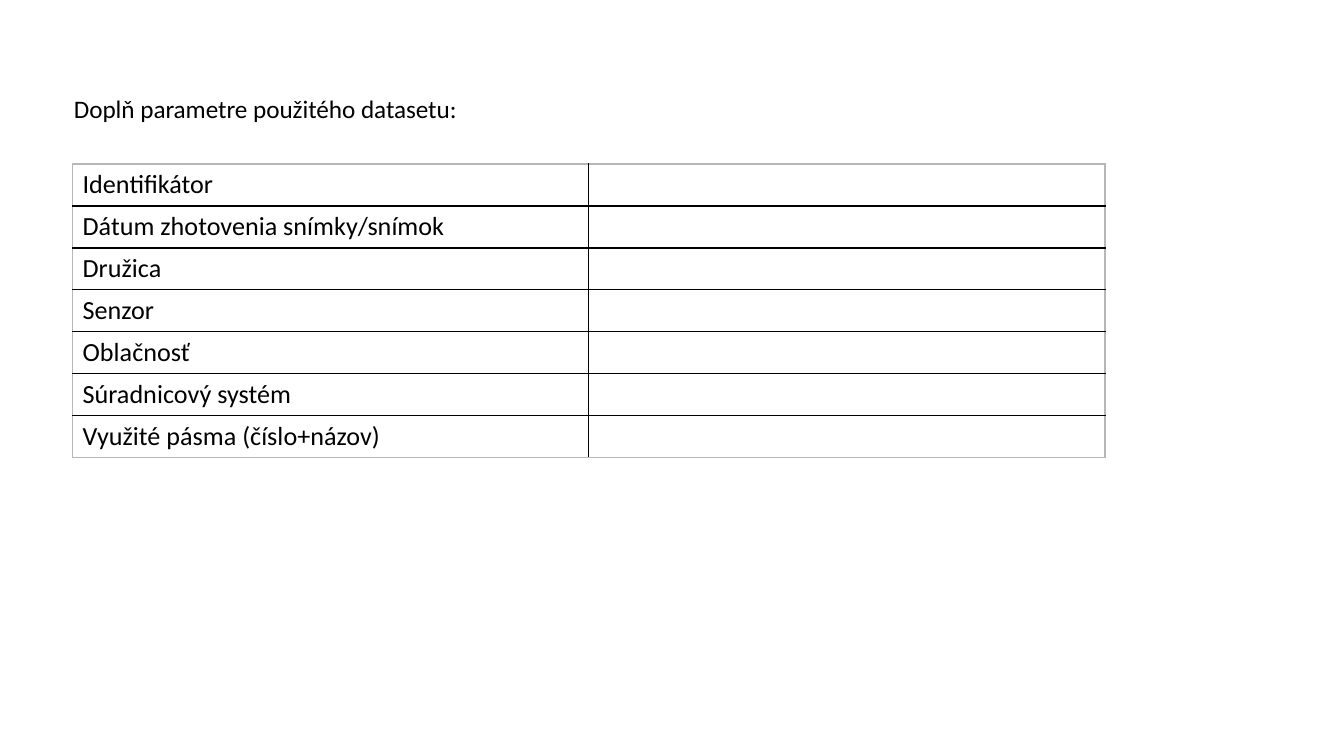
from lxml import etree
from pptx import Presentation
from pptx.dml.color import RGBColor
from pptx.enum import text
from pptx.oxml.ns import qn
from pptx.util import Inches, Pt

HEADING = "Doplň parametre použitého datasetu:"
PARAMETERS = [
    "Identifikátor",
    "Dátum zhotovenia snímky/snímok",
    "Družica",
    "Senzor",
    "Oblačnosť",
    "Súradnicový systém",
    "Využité pásma (číslo+názov)",
]
COLORS = {"text": "000000", "inner": "000000", "outer": "B7B7B7"}
FONT = "Calibri"
COLUMNS = 2
COLUMN_WIDTH = 3.84
ROW_HEIGHT = 0.3


def write(tf, content, size=14, color="text", align=text.PP_ALIGN.LEFT):
    p = tf.paragraphs[0]
    p.alignment = align
    if not content:
        etree.SubElement(p._p, qn("a:endParaRPr"), sz=str(size * 100))
        return
    r = p.add_run()
    r.text = content
    r.font.name = FONT
    r.font.size = Pt(size)
    r.font.color.rgb = RGBColor.from_string(COLORS[color])


def add_borders(cell, row, column):
    outer = {
        "a:lnL": column == 0,
        "a:lnR": column == COLUMNS - 1,
        "a:lnT": row == 0,
        "a:lnB": row == len(PARAMETERS) - 1,
    }
    tc_pr = cell._tc.get_or_add_tcPr()
    for i, (tag, on_edge) in enumerate(outer.items()):
        line = etree.Element(qn(tag), w=str(Pt(1)))
        fill = etree.SubElement(line, qn("a:solidFill"))
        color = COLORS["outer" if on_edge else "inner"]
        etree.SubElement(fill, qn("a:srgbClr"), val=color)
        tc_pr.insert(i, line)


def main():
    prs = Presentation()
    prs.slide_width = Inches(10)
    prs.slide_height = prs.slide_width * 9 // 16
    s = prs.slides.add_slide(prs.slide_layouts[5])

    title = s.shapes.title
    title.left, title.top = Inches(0.45), Inches(0.41)
    title.width, title.height = Inches(8.49), Inches(0.56)
    tf = title.text_frame
    tf.word_wrap = True
    tf.auto_size = text.MSO_AUTO_SIZE.NONE
    tf.vertical_anchor = text.MSO_ANCHOR.BOTTOM
    write(tf, HEADING, size=13.5)

    table = s.shapes.add_table(
        len(PARAMETERS), COLUMNS, Inches(0.54), Inches(1.22),
        Inches(COLUMN_WIDTH * COLUMNS), Inches(ROW_HEIGHT * len(PARAMETERS)),
    ).table
    table.first_row = table.horz_banding = False
    for column in table.columns:
        column.width = Inches(COLUMN_WIDTH)
    for i, name in enumerate(PARAMETERS):
        table.rows[i].height = Inches(ROW_HEIGHT)
        for j, content in enumerate((name, "")):
            cell = table.cell(i, j)
            cell.margin_left = cell.margin_right = Pt(5.4)
            cell.margin_top = cell.margin_bottom = Pt(2.7)
            cell.fill.background()
            add_borders(cell, i, j)
            write(cell.text_frame, content)

    prs.save("out.pptx")


if __name__ == "__main__":
    main()
